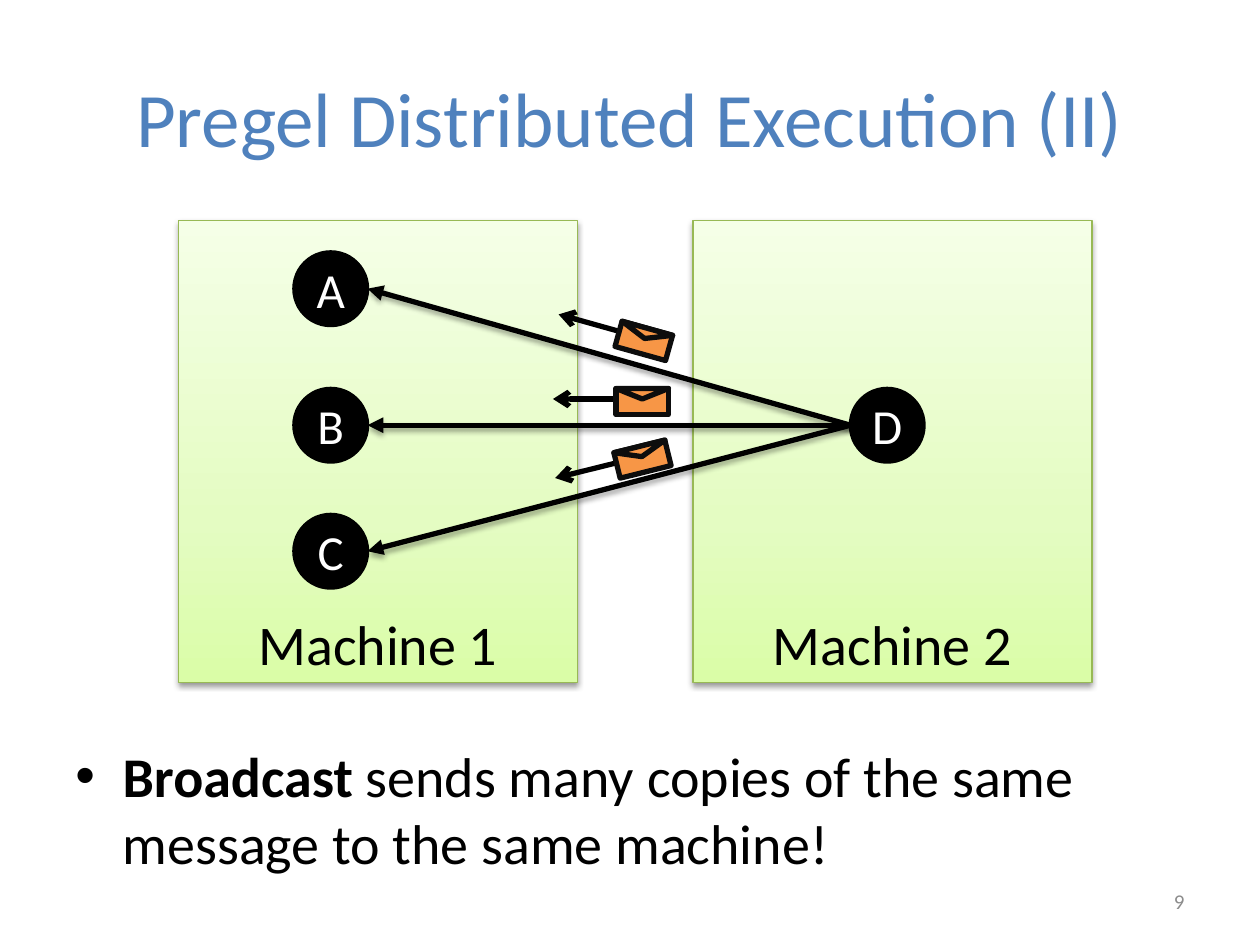
from dataclasses import dataclass

from lxml.etree import SubElement
from pptx import Presentation
from pptx.dml.color import RGBColor
from pptx.enum.shapes import MSO_CONNECTOR, MSO_SHAPE
from pptx.enum.text import MSO_ANCHOR as Anchor, PP_ALIGN as Align
from pptx.oxml.ns import qn
from pptx.util import Pt


@dataclass(frozen=True)
class Theme:
    font: str = "Calibri"
    title: str = "4F81BD"
    ink: str = "000000"
    paper: str = "FFFFFF"
    muted: str = "8C8C8C"
    machine_line: str = "98B955"
    machine_stops: tuple = ((0, "DAFDA7"), (35, "E4FCC2"), (100, "F5FFE7"))
    envelope: str = "F79646"
    envelope_line: str = "0D0D0D"
    title_size: int = 44
    body_size: int = 32
    node_size: int = 28
    number_size: int = 12
    stroke: int = 3


THEME = Theme()


@dataclass(frozen=True)
class Box:
    left: float
    top: float
    width: float
    height: float

    def inner(self, left, top, width, height):
        return Box(self.left + left, self.top + top, width, height)

    def emu(self):
        return Pt(self.left), Pt(self.top), Pt(self.width), Pt(self.height)


def style_text(paragraph, size, color, align):
    paragraph.alignment = align
    for run in paragraph.runs:
        run.font.name = THEME.font
        run.font.size = Pt(size)
        run.font.color.rgb = RGBColor.from_string(color)


def style_line(shape, color, width):
    shape.line.color.rgb = RGBColor.from_string(color)
    shape.line.width = Pt(width)


def set_effects(shape, opacity=0, distance=0):
    effects = SubElement(shape._element.spPr, qn("a:effectLst"))
    if opacity:
        shadow = SubElement(
            effects, qn("a:outerShdw"), blurRad=str(Pt(3.1)), dist=str(Pt(distance)),
            dir="5400000", rotWithShape="0")
        black = SubElement(shadow, qn("a:srgbClr"), val=THEME.ink)
        SubElement(black, qn("a:alpha"), val=str(opacity * 1000))


def add_solid(shapes, kind, box, fill, line, width):
    shape = shapes.add_shape(kind, *box.emu())
    shape.shadow.inherit = False
    shape.fill.solid()
    shape.fill.fore_color.rgb = RGBColor.from_string(fill)
    style_line(shape, line, width)
    return shape


def add_arrow(shapes, start, end, arrow_end, arrow_type):
    arrow = shapes.add_connector(
        MSO_CONNECTOR.STRAIGHT, *(Pt(value) for value in (*start, *end)))
    style_line(arrow, THEME.ink, THEME.stroke)
    SubElement(arrow.line._get_or_add_ln(), qn(arrow_end), type=arrow_type)
    return arrow


def add_title(slide, box, text):
    title = slide.shapes.title
    title.left, title.top, title.width, title.height = box.emu()
    title.text_frame.text = text
    style_text(title.text_frame.paragraphs[0], THEME.title_size, THEME.title, Align.CENTER)


def add_machine(shapes, box, label):
    machine = shapes.add_shape(MSO_SHAPE.RECTANGLE, *box.emu())
    machine.fill.gradient()
    machine.fill.gradient_angle = 90
    stops = machine._element.spPr.find(".//" + qn("a:gsLst"))
    for stop in list(stops):
        stops.remove(stop)
    for position, color in THEME.machine_stops:
        stop = SubElement(stops, qn("a:gs"), pos=str(position * 1000))
        SubElement(stop, qn("a:srgbClr"), val=color)
    style_line(machine, THEME.machine_line, 0.75)
    set_effects(machine, 38, 1.6)
    frame = machine.text_frame
    frame.text = label
    frame.vertical_anchor = Anchor.BOTTOM
    style_text(frame.paragraphs[0], THEME.body_size, THEME.ink, Align.CENTER)


def add_node(shapes, box, label):
    node = add_solid(shapes, MSO_SHAPE.OVAL, box, THEME.ink, THEME.ink, 2)
    frame = node.text_frame
    frame.text = label
    frame.word_wrap = False
    frame.margin_left = frame.margin_right = frame.margin_top = frame.margin_bottom = 0
    frame.vertical_anchor = Anchor.MIDDLE
    style_text(frame.paragraphs[0], THEME.node_size, THEME.paper, Align.CENTER)


def add_message(shapes, box, angle):
    message = shapes.add_group_shape()
    letter = box.inner(36, 0, 30, box.height)
    flap = box.inner(36, 0, 30, 6)
    arrow_y = box.top + 6
    arrow = add_arrow(message.shapes, (letter.left, arrow_y), (box.left, arrow_y),
                      "a:tailEnd", "arrow")
    set_effects(arrow)
    colors = THEME.envelope, THEME.envelope_line, THEME.stroke
    add_solid(message.shapes, MSO_SHAPE.RECTANGLE, letter, *colors)
    add_solid(message.shapes, MSO_SHAPE.ISOSCELES_TRIANGLE, flap, *colors).rotation = 180
    message.rotation = angle


def add_diagram(slide, box):
    shapes = slide.shapes
    for column, label in enumerate(("Machine 1", "Machine 2")):
        add_machine(shapes, box.inner(column * 294, 0, 228, box.height), label)

    diameter = 42
    receivers = {label: box.inner(66, top, diameter, diameter)
                 for label, top in (("A", 18), ("B", 96), ("C", 168))}
    sender = box.inner(384, 96, diameter, diameter)
    sender_side = sender.left, sender.top + diameter / 2
    for receiver in receivers.values():
        receiver_side = receiver.left + diameter, receiver.top + diameter / 2
        edge = add_arrow(shapes, receiver_side, sender_side, "a:headEnd", "triangle")
        set_effects(edge, 35, 1.8)
    for label, node in {**receivers, "D": sender}.items():
        add_node(shapes, node, label)

    width, height = 66, 15
    for center_x, center_y, angle in (
            (248.6, 64, 15.6), (247, 103.5, 0), (247.7, 140.7, -13.9)):
        add_message(shapes, box.inner(center_x - width / 2, center_y - height / 2,
                                      width, height), angle)


def add_takeaway(slide, box, emphasis, rest):
    frame = slide.shapes.add_textbox(*box.emu()).text_frame
    frame.word_wrap = True
    paragraph = frame.paragraphs[0]
    properties = paragraph._p.get_or_add_pPr()
    properties.set("marL", str(Pt(27)))
    properties.set("indent", str(-Pt(27)))
    SubElement(properties, qn("a:buFont"), typeface="Arial")
    SubElement(properties, qn("a:buChar"), char="•")
    for text, bold in ((emphasis, True), (rest, False)):
        run = paragraph.add_run()
        run.text = text
        run.font.bold = bold
    style_text(paragraph, THEME.body_size, THEME.ink, Align.LEFT)


def add_page_number(slide, box, number):
    frame = slide.shapes.add_textbox(*box.emu()).text_frame
    frame.word_wrap = True
    frame.vertical_anchor = Anchor.MIDDLE
    frame.text = number
    style_text(frame.paragraphs[0], THEME.number_size, THEME.muted, Align.RIGHT)


def main():
    deck = Presentation()
    deck.slide_width, deck.slide_height = Pt(720), Pt(540)
    slide = deck.slides.add_slide(deck.slide_layouts.get_by_name("Title Only"))
    add_title(slide, Box(36, 21.6, 648, 90), "Pregel Distributed Execution (II)")
    add_diagram(slide, Box(102, 126, 522, 264))
    add_takeaway(slide, Box(36, 420, 648, 108), "Broadcast",
                 " sends many copies of the same message to the same machine!")
    add_page_number(slide, Box(516, 500.5, 168, 28.8), "9")
    deck.save("out.pptx")


if __name__ == "__main__":
    main()
